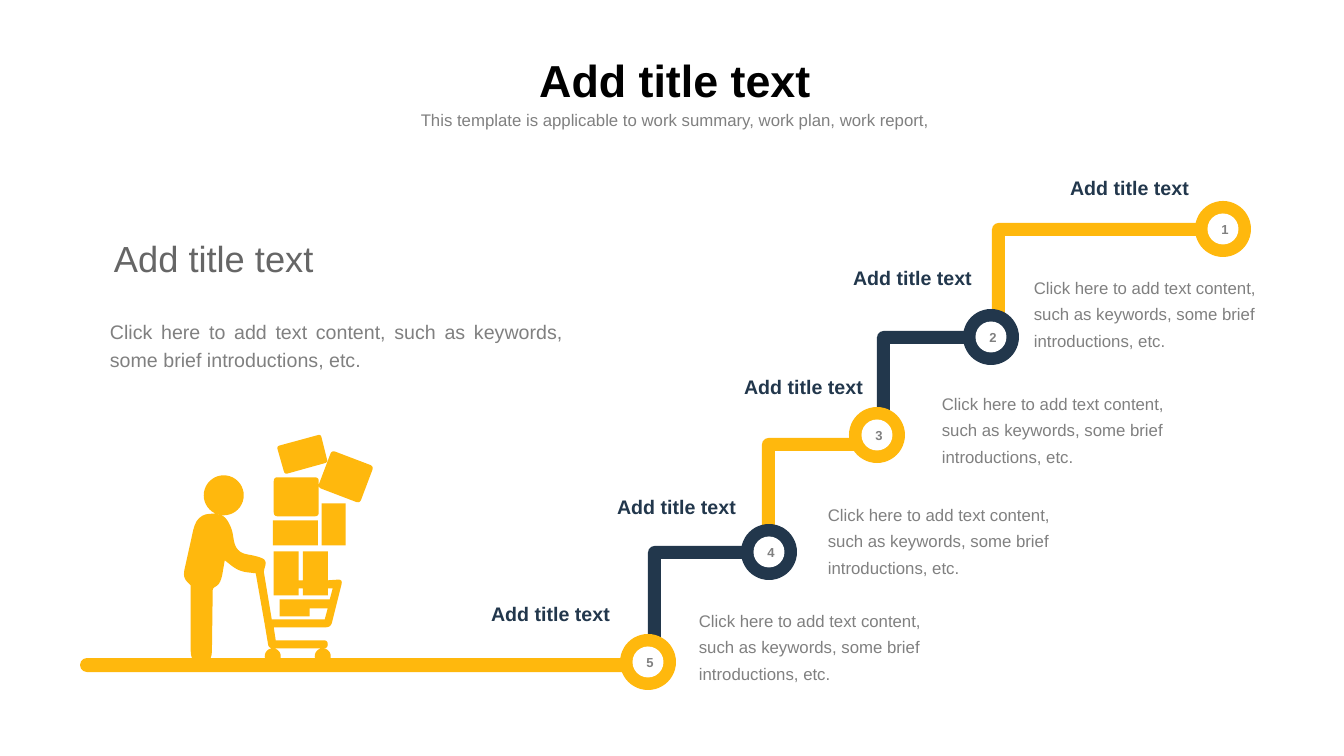
from math import cos, dist, pi, sin

from pptx import Presentation
from pptx.dml.color import RGBColor
from pptx.enum.shapes import MSO_SHAPE as Shape
from pptx.enum.text import MSO_ANCHOR as Anchor, PP_ALIGN as Align
from pptx.util import Pt

SCALE = 914400 / 100.8  # EMU per px
YELLOW, NAVY, GREY, DARK_GREY = "FFB80D", "22374C", "808080", "666666"
BAR = 13
RING, DISC = 56, 31

HEADING = "Add title text"
BODY = "Click here to add text content, such as keywords, some brief introductions, etc."
SUBTITLE = "This template is applicable to work summary, work plan, work report,"

# number, colour, ring centre, right top of the label, left top of the body text
STEPS = [
    ("5", YELLOW, (648, 662), (620, 597), (689, 600)),
    ("4", NAVY, (769, 552), (746, 490), (818, 494)),
    ("3", YELLOW, (877, 435), (873, 370), (932, 383)),
    ("2", NAVY, (991, 337), (982, 261), (1024, 267)),
    ("1", YELLOW, (1223, 229), (1199, 171), None),
]
# left top of the bar that climbs from each ring to the next
CORNERS = [(648, 546), (762, 438), (877, 331), (992, 223)]

# corners of the shopper and the cart: x, y, rounding
SHOPPER_AND_CART = [
    (196, 515, 16), (222, 514, 10), (231, 528, 8), (235, 553, 12), (257, 557, 8),
    (266, 561, 8), (263, 572, 2), (271, 620, 0), (324, 620, 0), (327, 609, 0),
    (309, 609, 0), (309, 617, 0), (279, 617, 0), (279, 600, 0), (329, 600, 0),
    (332, 589, 0), (327, 589, 0), (327, 596, 0), (302, 596, 0), (302, 589, 0),
    (298, 589, 0), (298, 596, 0), (273, 596, 0), (273, 552, 0), (298, 552, 0),
    (298, 581, 0), (302, 581, 0), (302, 552, 0), (327, 552, 0), (327, 581, 0),
    (342, 580, 5), (330, 628, 5), (273, 628, 0), (275, 641, 0), (327, 641, 4),
    (327, 649, 4), (268, 649, 4), (264, 625, 0), (255, 574, 0), (238, 572, 12),
    (224, 561, 0), (220, 584, 10), (212, 589, 2), (211, 664, 12), (190, 664, 12),
    (190, 586, 0), (182, 578, 8),
]
# four corners of each parcel and its rounding
PARCELS = [
    ([(272, 521), (317, 521), (317, 546), (272, 546)], 0),
    ([(321, 504), (345, 504), (345, 546), (321, 546)], 0),
    ([(273, 478), (318, 478), (318, 517), (273, 517)], 4),
    ([(331, 451), (373, 467), (359, 504), (317, 488)], 4),
    ([(320, 435), (327, 463), (284, 475), (276, 447)], 3),
]


def px(length):
    return round(length * SCALE)


def color(hex_text):
    return RGBColor.from_string(hex_text)


def paint(shape, fill):
    shape.shadow.inherit = False
    shape.fill.solid()
    shape.fill.fore_color.rgb = color(fill)
    shape.line.fill.background()


def add_block(slide, kind, left, top, width, height, fill):
    shape = slide.shapes.add_shape(kind, px(left), px(top), px(width), px(height))
    paint(shape, fill)
    return shape


def add_bar(slide, left, top, width, height, fill):
    bar = add_block(slide, Shape.ROUNDED_RECTANGLE, left, top, width, height, fill)
    bar.adjustments[0] = 0.5


def add_circle(slide, center, size, fill):
    x, y = center
    return add_block(slide, Shape.OVAL, x - size / 2, y - size / 2, size, size, fill)


def write(shape, text, size, font_color, bold=False, align=Align.LEFT, spacing=1.0):
    frame = shape.text_frame
    frame.word_wrap = True
    frame.text = text
    paragraph = frame.paragraphs[0]
    paragraph.alignment = align
    paragraph.line_spacing = spacing
    font = paragraph.runs[0].font
    font.name, font.size, font.bold = "Arial", Pt(size), bold
    font.color.rgb = color(font_color)


def add_text(slide, box, text, size, font_color, **style):
    shape = slide.shapes.add_textbox(*map(px, box))
    write(shape, text, size, font_color, **style)


def rounded(corners):
    """Return the outline through the corners, each eased by its own rounding."""
    outline = []
    for i, (x, y, radius) in enumerate(corners):
        if not radius:
            outline.append((x, y))
            continue
        ends = []
        for other in (corners[i - 1], corners[(i + 1) % len(corners)]):
            length = dist((x, y), other[:2])
            share = min(radius / length, 0.5)
            ends.append((x + (other[0] - x) * share, y + (other[1] - y) * share))
        (x0, y0), (x1, y1) = ends
        for t in (k / 6 for k in range(7)):
            a, b, c = (1 - t) ** 2, 2 * t * (1 - t), t ** 2
            outline.append((a * x0 + b * x + c * x1, a * y0 + b * y + c * y1))
    return outline


def circle(x, y, radius, count=40):
    angles = (2 * pi * k / count for k in range(count))
    return [(x + radius * cos(angle), y + radius * sin(angle)) for angle in angles]


def add_header(slide, left, top, width):
    title = slide.shapes.title
    title.left, title.top = px(left + 162), px(top)
    title.width, title.height = px(width - 324), px(65)
    write(title, HEADING, 32, "000000", bold=True, align=Align.CENTER)
    title.text_frame.vertical_anchor = Anchor.MIDDLE
    add_text(slide, (left, top + 54, width, 32), SUBTITLE, 12, GREY,
             align=Align.CENTER, spacing=1.2)


def add_introduction(slide, left, top, width):
    add_text(slide, (left + 4, top, width, 57), HEADING, 25.9, DARK_GREY, spacing=1.1)
    add_text(slide, (left, top + 83, width, 97), BODY, 14, GREY,
             align=Align.JUSTIFY, spacing=1.2)


def add_shopper(slide, left, top):
    """Draw the shopper with a loaded cart as one shape."""
    contours = [rounded(SHOPPER_AND_CART)]
    contours += [rounded([(*corner, radius) for corner in corners])
                 for corners, radius in PARCELS]
    contours += [circle(223, 496, 20), circle(272, 657, 8), circle(322, 657, 8)]
    builder = None
    for contour in contours:
        start, *rest = [(px(x), px(y)) for x, y in contour]
        if builder is None:
            builder = slide.shapes.build_freeform(*start)
        else:
            builder.move_to(*start)
        builder.add_line_segments(rest, close=True)
    shape = builder.convert_to_shape()
    shape.left, shape.top = px(left), px(top)
    paint(shape, YELLOW)


def add_stairs(slide, floor_left):
    floor_x, floor_y = STEPS[0][2]
    add_bar(slide, floor_left, floor_y - 4, floor_x - floor_left + 14, 14, YELLOW)
    for (left, top), lower, upper in zip(CORNERS, STEPS, STEPS[1:]):
        fill, middle = upper[1], top + BAR / 2
        add_block(slide, Shape.RECTANGLE, left, middle, BAR, lower[2][1] - middle, fill)
        add_bar(slide, left, top, upper[2][0] - left, BAR, fill)
    for step in STEPS:
        add_step(slide, *step)


def add_step(slide, number, fill, center, label, body):
    add_circle(slide, center, RING, fill)
    disc = add_circle(slide, center, DISC, "FFFFFF")
    write(disc, number, 9.3, GREY, bold=True, align=Align.CENTER)
    frame = disc.text_frame
    frame.vertical_anchor = Anchor.MIDDLE
    frame.margin_left = px(4)
    frame.margin_right = frame.margin_top = frame.margin_bottom = 0
    right, top = label
    add_text(slide, (right - 254, top, 254, 51), HEADING, 14, NAVY,
             bold=True, align=Align.RIGHT)
    if body:
        add_text(slide, (*body, 254, 51), BODY, 12, GREY, spacing=1.3)


def main():
    presentation = Presentation()
    presentation.slide_width, presentation.slide_height = px(1344), px(756)
    slide = presentation.slides.add_slide(presentation.slide_layouts[5])
    add_stairs(slide, 80)
    add_introduction(slide, 100, 227, 473)
    add_shopper(slide, 184, 435)
    add_header(slide, 366, 47, 618)
    presentation.save("out.pptx")


if __name__ == "__main__":
    main()
